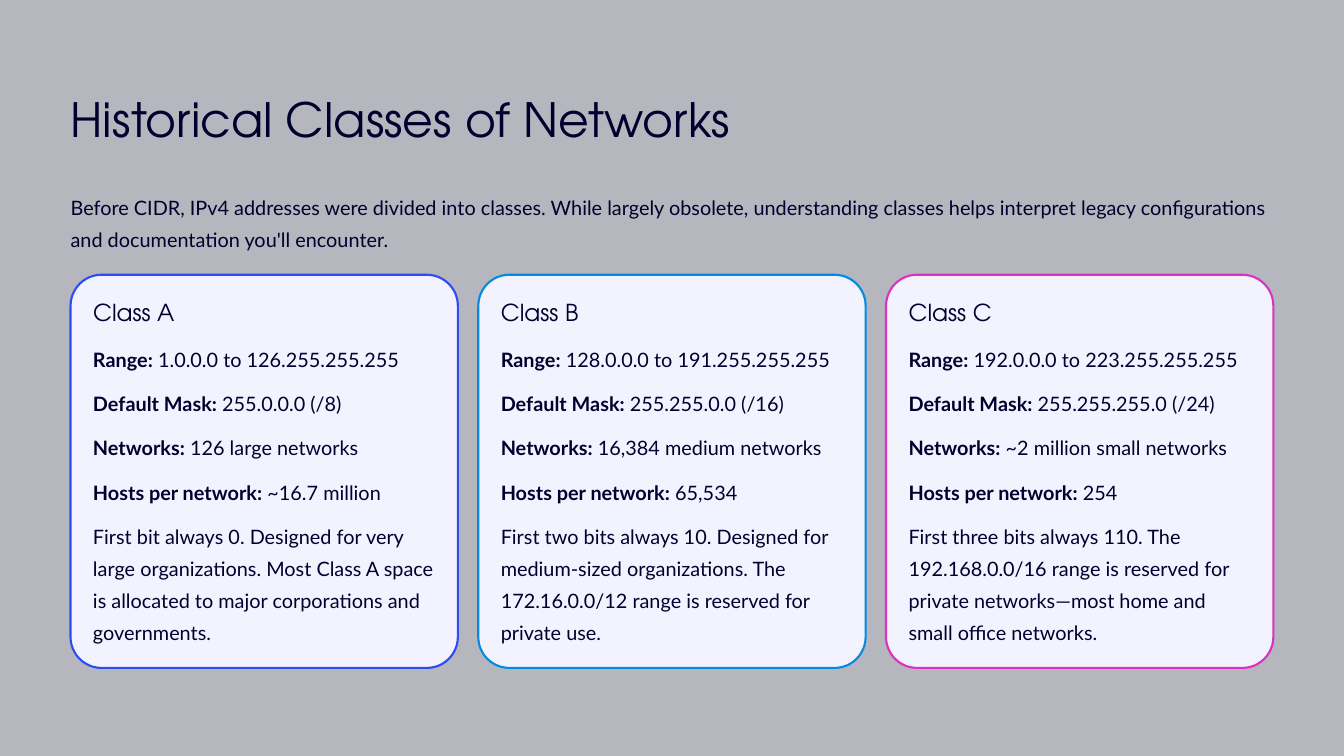
from dataclasses import dataclass

from pptx import Presentation
from pptx.dml.color import RGBColor
from pptx.enum.shapes import MSO_SHAPE
from pptx.util import Pt

TITLE = "Historical Classes of Networks"
INTRO = (
    "Before CIDR, IPv4 addresses were divided into classes. While largely obsolete, "
    "understanding classes helps interpret legacy configurations and documentation "
    "you'll encounter."
)
LABELS = ["Range:", "Default Mask:", "Networks:", "Hosts per network:"]
CARDS = [
    (
        "Class A",
        "2D4DF2",
        ["1.0.0.0 to 126.255.255.255", "255.0.0.0 (/8)", "126 large networks", "~16.7 million"],
        "First bit always 0. Designed for very large organizations. Most Class A space "
        "is allocated to major corporations and governments.",
    ),
    (
        "Class B",
        "018CE1",
        ["128.0.0.0 to 191.255.255.255", "255.255.0.0 (/16)", "16,384 medium networks", "65,534"],
        "First two bits always 10. Designed for medium-sized organizations. The "
        "172.16.0.0/12 range is reserved for private use.",
    ),
    (
        "Class C",
        "DA33BF",
        ["192.0.0.0 to 223.255.255.255", "255.255.255.0 (/24)", "~2 million small networks", "254"],
        "First three bits always 110. The 192.168.0.0/16 range is reserved for private "
        "networks—most home and small office networks.",
    ),
]


@dataclass(frozen=True)
class Theme:
    back: str = "B6B6BF"
    card: str = "F3F3FF"
    ink: str = "00002E"
    head: str = "TeX Gyre Adventor"
    body: str = "Lato"
    title: float = 40.5
    name: float = 20
    text: float = 17


THEME = Theme()
WIDTH, HEIGHT = 1152, 648
EDGE = 60.5
SPAN = WIDTH - 2 * EDGE
GAP = 17.5
CARD_W = (SPAN - GAP * (len(CARDS) - 1)) / len(CARDS)
CARD_TOP, CARD_H = 235.5, 337
PAD = 19.25
ROW_TOP, ROW_STEP = 290.6, 38
LINE = 27.5


def paint(fill, color):
    fill.solid()
    fill.fore_color.rgb = RGBColor.from_string(color)


def add_text(slide, text, left, top, width, height, label="", wrap=False,
             font=THEME.body, size=THEME.text, lead=LINE):
    box = slide.shapes.add_textbox(Pt(left), Pt(top), Pt(width), Pt(height))
    frame = box.text_frame
    frame.word_wrap = wrap
    frame.margin_left = frame.margin_right = frame.margin_top = frame.margin_bottom = 0
    line = frame.paragraphs[0]
    line.line_spacing = Pt(lead)
    parts = [(label, True), (f" {text}", False)] if label else [(text, False)]
    for words, bold in parts:
        run = line.add_run()
        run.text = words
        run.font.name = font
        run.font.size = Pt(size)
        run.font.bold = bold
        run.font.color.rgb = RGBColor.from_string(THEME.ink)


def add_card(slide, left, name, color, facts, note):
    card = slide.shapes.add_shape(
        MSO_SHAPE.ROUNDED_RECTANGLE, Pt(left), Pt(CARD_TOP), Pt(CARD_W), Pt(CARD_H)
    )
    card.adjustments[0] = 0.08
    card.shadow.inherit = False
    paint(card.fill, THEME.card)
    paint(card.line.fill, color)
    card.line.width = Pt(1.8)

    inner, room = left + PAD, CARD_W - 2 * PAD
    add_text(slide, name, inner, CARD_TOP + PAD, 204, 25,
             font=THEME.head, size=THEME.name, lead=25)
    for row, (label, fact) in enumerate(zip(LABELS, facts)):
        add_text(slide, fact, inner, ROW_TOP + row * ROW_STEP, room, LINE, label=label)
    add_text(slide, note, inner, ROW_TOP + len(LABELS) * ROW_STEP, room, 4 * LINE, wrap=True)


def main():
    deck = Presentation()
    deck.slide_width, deck.slide_height = Pt(WIDTH), Pt(HEIGHT)
    slide = deck.slides.add_slide(deck.slide_layouts[6])
    paint(slide.background.fill, THEME.back)
    add_text(slide, TITLE, EDGE, 75.5, 569, 51,
             font=THEME.head, size=THEME.title, lead=50.5)
    add_text(slide, INTRO, EDGE, 160.5, SPAN, 2 * LINE, wrap=True)
    for col, card in enumerate(CARDS):
        add_card(slide, EDGE + col * (CARD_W + GAP), *card)
    deck.save("out.pptx")


if __name__ == "__main__":
    main()
